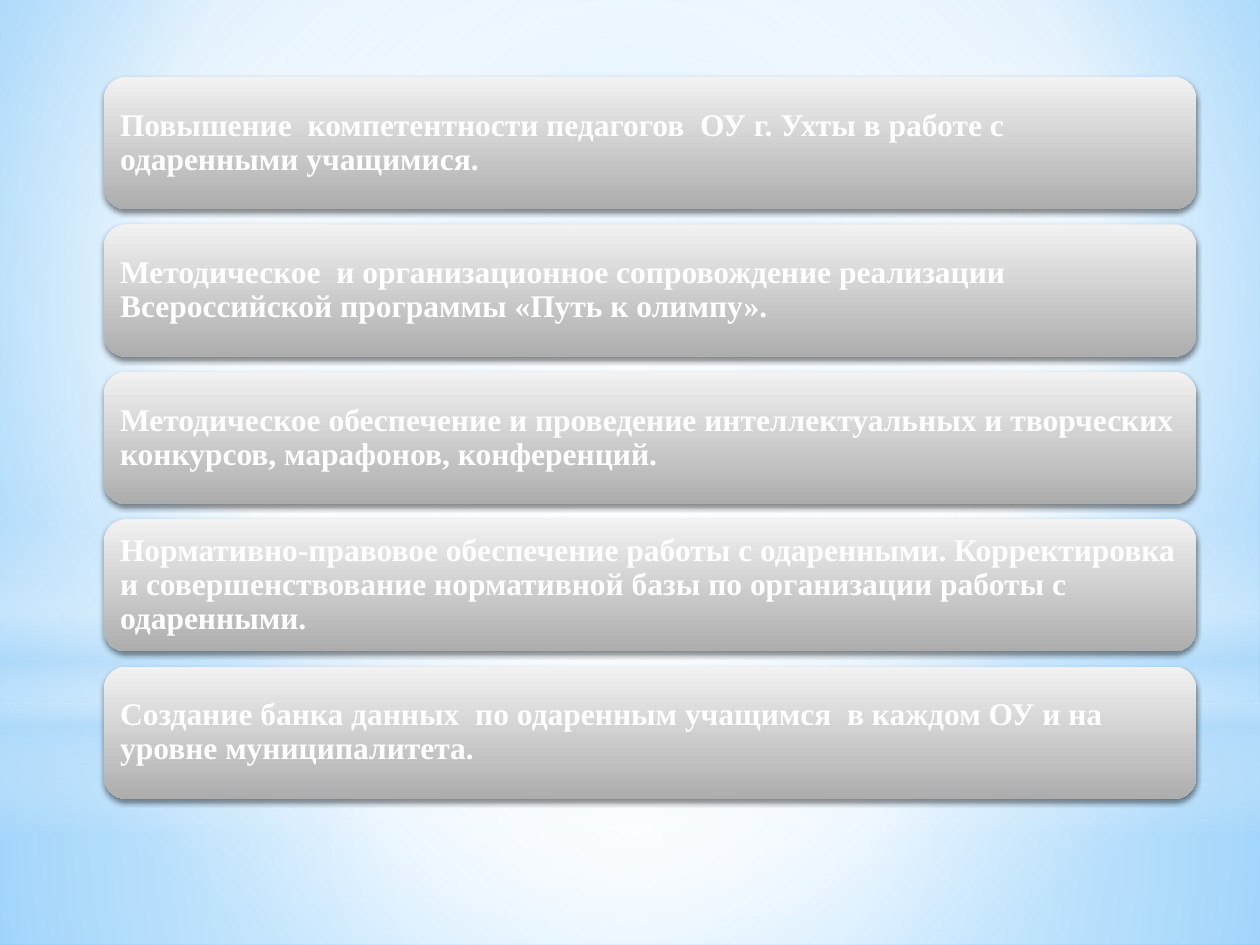
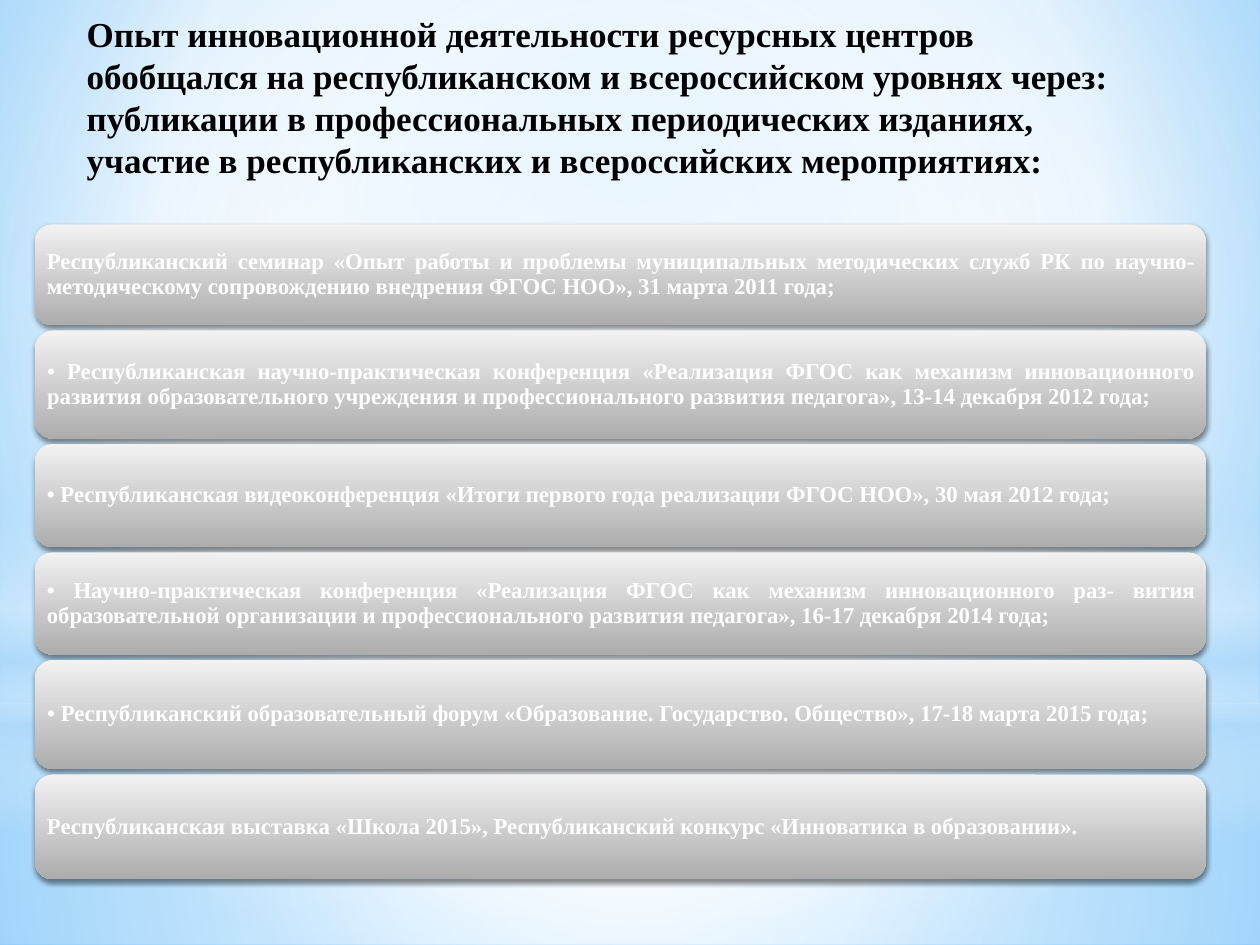
from dataclasses import dataclass

import pptx
import pptx.dml.color
import pptx.enum.shapes
import pptx.enum.text
import pptx.oxml
import pptx.oxml.ns
import pptx.util

Pt = pptx.util.Pt
qn = pptx.oxml.ns.qn
SHAPES = pptx.enum.shapes.MSO_SHAPE
ALIGN = pptx.enum.text.PP_ALIGN
WIDTH, HEIGHT = 720, 540


@dataclass(frozen=True)
class Theme:
    font: str = "Times New Roman"
    title_color: str = "000000"
    card_text: str = "FFFFFF"
    card_top: str = "F2F2F2"
    card_bottom: str = "ADADAD"
    shadow: str = "000000"
    glow: str = "FFFFFF"
    haze: str = "B4DCFA"
    sky_center: str = "9ED5FF"
    sky_edge: str = "5BB9FF"
    title_size: int = 20
    goal_size: int = 18
    event_size: int = 13


THEME = Theme()
CENTER = (50, 50, 50, 50)

GOALS = [
    "Повышение  компетентности педагогов  ОУ г. Ухты в работе с одаренными учащимися.",
    "Методическое  и организационное сопровождение реализации Всероссийской программы «Путь к олимпу».",
    "Методическое обеспечение и проведение интеллектуальных и творческих конкурсов, марафонов, конференций.",
    "Нормативно-правовое обеспечение работы с одаренными. Корректировка и совершенствование "
    "нормативной базы по организации работы с одаренными.",
    "Создание банка данных  по одаренным учащимся  в каждом ОУ и на уровне муниципалитета.",
]
EXPERIENCE_TITLE = (
    "Опыт инновационной деятельности ресурсных центров обобщался на республиканском "
    "и всероссийском уровнях через: публикации в профессиональных периодических изданиях, "
    "участие в республиканских и всероссийских мероприятиях:"
)
EVENTS = [
    "Республиканский семинар «Опыт работы и проблемы муниципальных методических служб РК "
    "по научно-методическому сопровождению внедрения ФГОС НОО», 31 марта 2011 года;",
    "• Республиканская научно-практическая конференция «Реализация ФГОС как механизм "
    "инновационного развития образовательного учреждения и профессионального развития "
    "педагога», 13-14 декабря 2012 года;",
    "• Республиканская видеоконференция «Итоги первого года реализации ФГОС НОО», 30 мая 2012 года;",
    "• Научно-практическая конференция «Реализация ФГОС как механизм инновационного раз- вития "
    "образовательной организации и профессионального развития педагога», 16-17 декабря 2014 года;",
    "• Республиканский образовательный форум «Образование. Государство. Общество», 17-18 марта 2015 года;",
    "Республиканская выставка «Школа 2015», Республиканский конкурс «Инноватика в образовании».",
]
EVENT_HEIGHTS = [57.6, 61.9, 59, 58.3, 62.6, 59.8]


def paint_gradient(fill, properties, stops, focus=None):
    """Fill with (position, colour, opacity) stops: circular round focus, else downwards."""
    fill.gradient()
    stop_xml = "".join(
        f'<a:gs pos="{position * 1000}"><a:srgbClr val="{color}">'
        f'<a:alpha val="{opacity * 1000}"/></a:srgbClr></a:gs>'
        for position, color, opacity in stops
    )
    if focus:
        sides = " ".join(f'{side}="{inset * 1000}"' for side, inset in zip("ltrb", focus))
        direction = f'<a:path path="circle"><a:fillToRect {sides}/></a:path>'
    else:
        direction = '<a:lin ang="5400000" scaled="0"/>'
    gradient = pptx.oxml.parse_xml(
        f'<a:gradFill {pptx.oxml.ns.nsdecls("a")} rotWithShape="1">'
        f"<a:gsLst>{stop_xml}</a:gsLst>{direction}</a:gradFill>"
    )
    properties.replace(properties.find(qn("a:gradFill")), gradient)


def add_gradient_shape(slide, kind, box, stops, focus=None):
    shape = slide.shapes.add_shape(kind, *map(Pt, box))
    shape.shadow.inherit = False
    shape.line.fill.background()
    paint_gradient(shape.fill, shape.element.spPr, stops, focus)
    return shape


def write_text(frame, text, size, color):
    frame.word_wrap = True
    paragraph = frame.paragraphs[0]
    paragraph.text = text
    paragraph.alignment = ALIGN.LEFT
    font = paragraph.font
    font.name, font.size, font.bold = THEME.font, Pt(size), True
    font.color.rgb = pptx.dml.color.RGBColor.from_string(color)
    return paragraph


def add_soft_shadow(shape):
    effects = shape.element.spPr.find(qn("a:effectLst"))
    effects.append(pptx.oxml.parse_xml(
        f'<a:outerShdw {pptx.oxml.ns.nsdecls("a")} blurRad="{Pt(3.1)}" dist="{Pt(1.8)}" '
        f'dir="5400000" rotWithShape="0"><a:srgbClr val="{THEME.shadow}">'
        '<a:alpha val="45000"/></a:srgbClr></a:outerShdw>'
    ))


def add_card(slide, box, text, size, alignment):
    stops = [(0, THEME.card_top, 100), (100, THEME.card_bottom, 100)]
    card = add_gradient_shape(slide, SHAPES.ROUNDED_RECTANGLE, box, stops)
    add_soft_shadow(card)
    frame = card.text_frame
    frame.vertical_anchor = pptx.enum.text.MSO_ANCHOR.MIDDLE
    frame.margin_left = frame.margin_right = Pt(0.3 * size)
    frame.margin_top = frame.margin_bottom = Pt(0.3 * size)
    paragraph = write_text(frame, text, size, THEME.card_text)
    paragraph.alignment = alignment
    paragraph.line_spacing = 0.9


def add_card_stack(slide, left, top, width, heights, gap, texts, size, alignment=ALIGN.LEFT):
    for text, height in zip(texts, heights):
        add_card(slide, (left, top, width, height), text, size, alignment)
        top += height + gap


def add_title(slide, box, text):
    title = slide.shapes.add_textbox(*map(Pt, box))
    write_text(title.text_frame, text, THEME.title_size, THEME.title_color)
    title.text_frame.auto_size = pptx.enum.text.MSO_AUTO_SIZE.SHAPE_TO_FIT_TEXT


def dress_master(master, slide):
    """Give the master its sky and light bands; the bands are drawn on slide, then moved."""
    sky = [(0, THEME.sky_center, 100), (60, THEME.glow, 100), (100, THEME.sky_edge, 100)]
    fill = master.background.fill
    fill.gradient()
    paint_gradient(fill, master.element.find(f".//{qn('p:bgPr')}"), sky, (20, 10, 20, 60))

    glow, haze = THEME.glow, THEME.haze
    horizon = 401.8
    ground = [(0, glow, 91), (37, glow, 76), (100, haze, 79)]
    air = [(0, glow, 89), (48, glow, 62), (100, haze, 79)]
    streaks = [(0, glow, 0), (29, glow, 30), (45, haze, 40),
               (55, glow, 26), (65, haze, 60), (100, glow, 0)]
    halo = [(0, glow, 100), (56, glow, 0)]
    bands = [
        (SHAPES.RECTANGLE, (0, horizon, WIDTH, HEIGHT - horizon), ground, CENTER),
        (SHAPES.RECTANGLE, (0, 0, WIDTH, horizon), air, CENTER),
        (SHAPES.RECTANGLE, (0, 297, WIDTH, 180), streaks, None),
        (SHAPES.OVAL, (0, 126, WIDTH, horizon), halo, CENTER),
    ]
    for number, band in enumerate(bands, start=100):
        element = add_gradient_shape(slide, *band).element
        element.nvSpPr.cNvPr.id = number
        master.shapes.element.append(element)


def main():
    deck = pptx.Presentation()
    deck.slide_width, deck.slide_height = Pt(WIDTH), Pt(HEIGHT)
    blank = deck.slide_layouts[6]

    goals = deck.slides.add_slide(blank)
    dress_master(deck.slide_master, goals)
    add_card_stack(goals, 59.5, 43.9, 624, [75.6] * len(GOALS), 8.65, GOALS, THEME.goal_size)

    experience = deck.slides.add_slide(blank)
    add_title(experience, (42.5, 3.6, 623.5, 104.4), EXPERIENCE_TITLE)
    add_card_stack(experience, 20, 128.2, 669, EVENT_HEIGHTS, 3, EVENTS,
                   THEME.event_size, ALIGN.JUSTIFY)

    deck.save("out.pptx")


if __name__ == "__main__":
    main()
